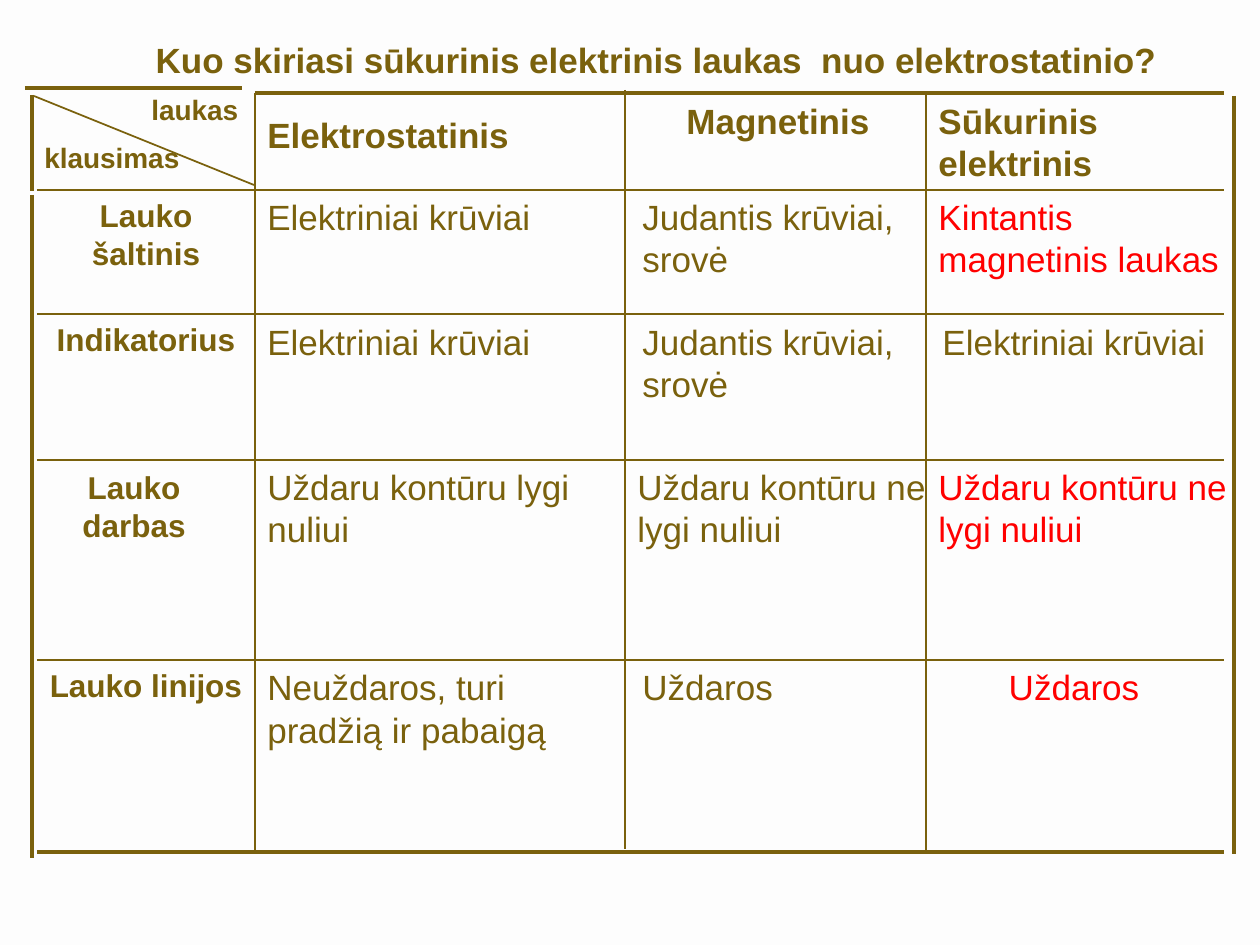
from itertools import pairwise

from lxml import etree
from pptx import Presentation
from pptx import util as u
from pptx.dml.color import RGBColor
from pptx.enum import shapes, text
from pptx.oxml.ns import qn

PX = 914400 / 126
OLIVE, RED, PAPER = "7A610D", "FF0000", "FDFDFD"
LEFT, CENTER = text.PP_ALIGN.LEFT, text.PP_ALIGN.CENTER
THIN, THICK = 1, 2.25

# Table geometry, relative to the table's top left corner
COLUMNS = [0, 218, 593, 889, 1185]
ROWS = [0, 97, 221, 367, 567, 759]
HEADINGS = ["Elektrostatinis", "Magnetinis", "Sūkurinis elektrinis"]
QUESTIONS = [
    ["Lauko šaltinis", "Elektriniai krūviai", "Judantis krūviai, srovė",
     "Kintantis magnetinis laukas"],
    ["Indikatorius", "Elektriniai krūviai", "Judantis krūviai, srovė",
     "Elektriniai krūviai"],
    ["Lauko darbas", "Uždaru kontūru lygi nuliui",
     "Uždaru kontūru ne lygi nuliui", "Uždaru kontūru ne lygi nuliui"],
    ["Lauko linijos", "Neuždaros, turi pradžią ir pabaigą", "Uždaros", "Uždaros"],
]
# Cells that differ from the grid: (row, column) -> shift right, shift down, extra width
SHIFTS = {(1, 3): (0, 0, 23), (3, 0): (-12, 2, 0),
          (3, 2): (-5, 0, 42), (3, 3): (0, 0, 38)}
CENTERED = {(0, 2), (2, 3), (4, 3)}
RED_CELLS = {(1, 3), (3, 3), (4, 3)}


def px(length):
    return u.Emu(round(length * PX))


def color(value):
    return RGBColor.from_string(value)


def write(box, words, size=20, bold=False, align=LEFT, ink=OLIVE, wrap=True, inset=6):
    frame = box.text_frame
    frame.word_wrap = wrap
    frame.auto_size = text.MSO_AUTO_SIZE.NONE
    frame.vertical_anchor = text.MSO_ANCHOR.TOP
    frame.margin_top = px(inset)
    para = frame.paragraphs[0]
    para.text = words
    para.alignment = align
    para.font.name = "Arial"
    para.font.size = u.Pt(size)
    para.font.bold = bold
    para.font.color.rgb = color(ink)


def add_text(page, left, top, width, height, words, **style):
    box = page.shapes.add_textbox(px(left), px(top), px(width), px(height))
    write(box, words, **style)


def add_line(page, x1, y1, x2, y2, weight=THIN):
    line = page.shapes.add_connector(
        shapes.MSO_CONNECTOR.STRAIGHT, px(x1), px(y1), px(x2), px(y2))
    line.line.color.rgb = color(OLIVE)
    line.line.width = u.Pt(weight)
    etree.SubElement(line._element.spPr, qn("a:effectLst"))


def add_title(page, left, top, width, height):
    title = page.shapes.title
    title.left, title.top = px(left), px(top)
    title.width, title.height = px(width), px(height)
    write(title, "Kuo skiriasi sūkurinis elektrinis laukas  nuo elektrostatinio?",
          bold=True, align=CENTER)


def add_cells(page, left, top):
    spans = list(pairwise(COLUMNS))
    for row, (start, end) in enumerate(pairwise(ROWS)):
        entries = QUESTIONS[row - 1] if row else [None] + HEADINGS
        for column, words in enumerate(entries):
            if words is None:
                continue
            x, next_x = spans[column]
            right, down, extra = SHIFTS.get((row, column), (0, 0, 0))
            label = column == 0
            add_text(
                page, left + x + right, top + start + down,
                next_x - x + extra, end - start, words,
                size=18 if label else 20,
                bold=label or row == 0,
                align=CENTER if label or (row, column) in CENTERED else LEFT,
                ink=RED if (row, column) in RED_CELLS else OLIVE,
                inset=20 if (row, column) == (0, 1) else 6)


def add_corner(page, left, top):
    add_text(page, left + 102, top - 38, 126, 72, "laukas", size=16, bold=True,
             inset=38)
    add_text(page, left - 5, top + 42, 163, 47, "klausimas", size=16, bold=True,
             wrap=False)
    add_line(page, left - 3, top + 3, left + 217, top + 92)
    add_line(page, left - 12, top - 5, left + 205, top - 5, THICK)


def add_rules(page, left, top):
    right, bottom = left + COLUMNS[-1] + 2, top + ROWS[-1]
    # Rows
    for y in ROWS[1:-1]:
        add_line(page, left, top + y, right, top + y)
    add_line(page, left + COLUMNS[1], top, right, top, THICK)
    add_line(page, left, bottom, right, bottom, THICK)
    # Columns; the middle one sits a little up and to the left
    for x, shift, rise in zip(COLUMNS[1:-1], (0, 5, 0), (0, 3, 0)):
        add_line(page, left + x - shift, top - rise, left + x - shift, bottom - rise)
    # Outer sides
    add_line(page, left - 5, top + 2, left - 5, top + 98, THICK)
    add_line(page, left - 5, top + 102, left - 5, bottom + 6, THICK)
    add_line(page, right + 10, top + 3, right + 10, bottom + 2, THICK)


def main():
    deck = Presentation()
    deck.slide_width, deck.slide_height = px(1260), px(945)
    page = deck.slides.add_slide(deck.slide_layouts[5])
    page.background.fill.solid()
    page.background.fill.fore_color.rgb = color(PAPER)

    add_title(page, 0, 32, 1313, 55)
    table = 37, 93
    add_cells(page, *table)
    add_corner(page, *table)
    add_rules(page, *table)
    deck.save("out.pptx")


if __name__ == "__main__":
    main()
